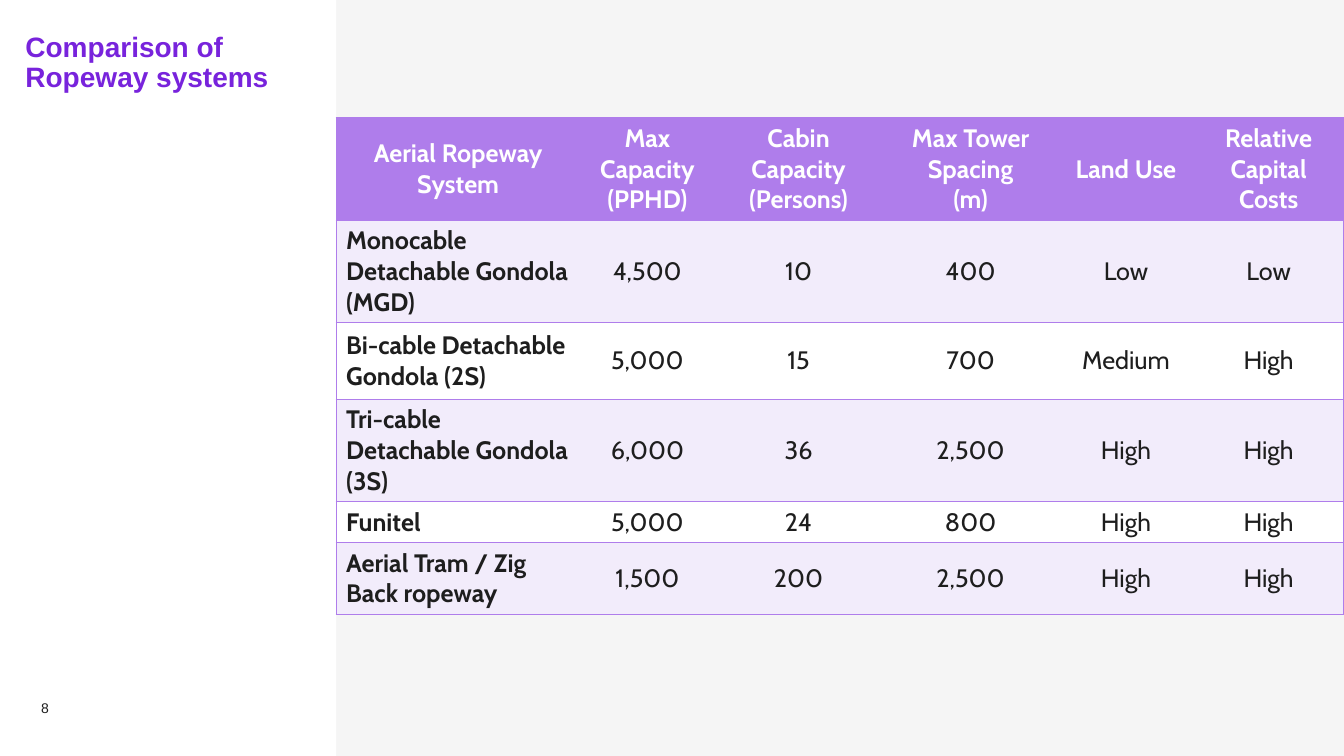
"""Build a slide that compares aerial ropeway systems in a table."""
from pptx import Presentation
from pptx.dml.color import RGBColor
from pptx.enum.shapes import MSO_SHAPE as Shape
from pptx.enum.text import MSO_ANCHOR as Anchor, MSO_AUTO_SIZE as AutoSize, PP_ALIGN as Align
from pptx.oxml import parse_xml
from pptx.oxml.ns import nsdecls
from pptx.util import Cm, Pt

TITLE = "Comparison of Ropeway systems"
PAGE_NUMBER = "8"
HEADERS = [
    ["Aerial Ropeway System"],
    ["Max Capacity", "(PPHD)"],
    ["Cabin Capacity", "(Persons)"],
    ["Max Tower Spacing", "(m)"],
    ["Land Use"],
    ["Relative Capital Costs"],
]
SYSTEMS = [
    ("Monocable Detachable Gondola (MGD)", "4,500", "10", "400", "Low", "Low"),
    ("Bi-cable Detachable Gondola (2S)", "5,000", "15", "700", "Medium", "High"),
    ("Tri-cable Detachable Gondola (3S)", "6,000", "36", "2,500", "High", "High"),
    ("Funitel", "5,000", "24", "800", "High", "High"),
    ("Aerial Tram / Zig Back ropeway", "1,500", "200", "2,500", "High", "High"),
]
COLUMN_WIDTHS = [6.15, 3.39, 4.23, 4.44, 3.39, 3.8]
ROW_HEIGHTS = [2.58, 2.58, 1.93, 2.58, 1.02, 1.81]
SLIDE_WIDTH, SLIDE_HEIGHT = 33.87, 19.05
PANEL_WIDTH, TABLE_TOP = 8.47, 2.97

PURPLE, LILAC, ACCENT = "7823DC", "AF7DEB", "F2ECFB"
INK, WHITE, GREY = "1E1E1E", "FFFFFF", "F5F5F5"


def paint(fill, color):
    fill.solid()
    fill.fore_color.rgb = RGBColor.from_string(color)


def add_span(para, text, size, font, color, bold=False):
    span = para.add_run()
    span.text = text
    span.font.size = Pt(size)
    span.font.name = font
    span.font.bold = bold
    span.font.color.rgb = RGBColor.from_string(color)


def set_frame(frame, anchor, wrap):
    frame.margin_left = frame.margin_top = frame.margin_right = frame.margin_bottom = 0
    frame.vertical_anchor = anchor
    frame.word_wrap = wrap
    frame.auto_size = AutoSize.NONE
    para = frame.paragraphs[0]
    para.alignment = Align.LEFT
    para.line_spacing = 0.9
    return para


def set_borders(cell, visible_sides):
    for side in "LRTB":
        if side in visible_sides:
            line = f'<a:solidFill><a:srgbClr val="{LILAC}"/></a:solidFill>'
        else:
            line = "<a:noFill/>"
        border = f'<a:ln{side} {nsdecls("a")} w="{Pt(1)}">{line}</a:ln{side}>'
        cell._tc.get_or_add_tcPr().append(parse_xml(border))


def fill_cell(cell, lines, row, column):
    header = row == 0
    last_column = len(COLUMN_WIDTHS) - 1
    set_borders(cell, "TB" + "L" * (column == 0) + "R" * (column == last_column))
    paint(cell.fill, LILAC if header else ACCENT if row % 2 else WHITE)
    cell.vertical_anchor = Anchor.MIDDLE
    for index, text in enumerate(lines):
        frame = cell.text_frame
        para = frame.add_paragraph() if index else frame.paragraphs[0]
        para.alignment = Align.CENTER if header or column else Align.LEFT
        add_span(para, text, 18, "Cabin", WHITE if header else INK, header or column == 0)


def add_comparison(page):
    rows = [HEADERS] + [[[value] for value in system] for system in SYSTEMS]
    table = page.shapes.add_table(
        len(rows), len(HEADERS), Cm(PANEL_WIDTH), Cm(TABLE_TOP),
        Cm(sum(COLUMN_WIDTHS)), Cm(sum(ROW_HEIGHTS)),
    ).table
    table.horz_banding = False
    for column, width in zip(table.columns, COLUMN_WIDTHS):
        column.width = Cm(width)
    for row, height in zip(table.rows, ROW_HEIGHTS):
        row.height = Cm(height)
    for row, values in enumerate(rows):
        for column, lines in enumerate(values):
            fill_cell(table.cell(row, column), lines, row, column)


def main():
    deck = Presentation()
    deck.slide_width, deck.slide_height = Cm(SLIDE_WIDTH), Cm(SLIDE_HEIGHT)
    page = deck.slides.add_slide(deck.slide_layouts[5])
    paint(page.background.fill, GREY)

    title = page.shapes.title
    title.left, title.top, title.width, title.height = Cm(0.64), Cm(0.84), Cm(7.19), Cm(6.15)
    para = set_frame(title.text_frame, Anchor.TOP, True)
    add_span(para, TITLE, 20, "Arial", PURPLE, True)

    panel = page.shapes.add_shape(Shape.RECTANGLE, 0, 0, Cm(PANEL_WIDTH), Cm(SLIDE_HEIGHT))
    panel.shadow.inherit = False
    paint(panel.fill, WHITE)
    panel.line.fill.background()
    title.element.addprevious(panel.element)

    number = page.shapes.add_textbox(Cm(1.04), Cm(17.3), Cm(1.04), Cm(0.76))
    para = set_frame(number.text_frame, Anchor.BOTTOM, False)
    add_span(para, PAGE_NUMBER, 10, "Arial", INK)

    add_comparison(page)
    deck.save("out.pptx")


if __name__ == "__main__":
    main()
